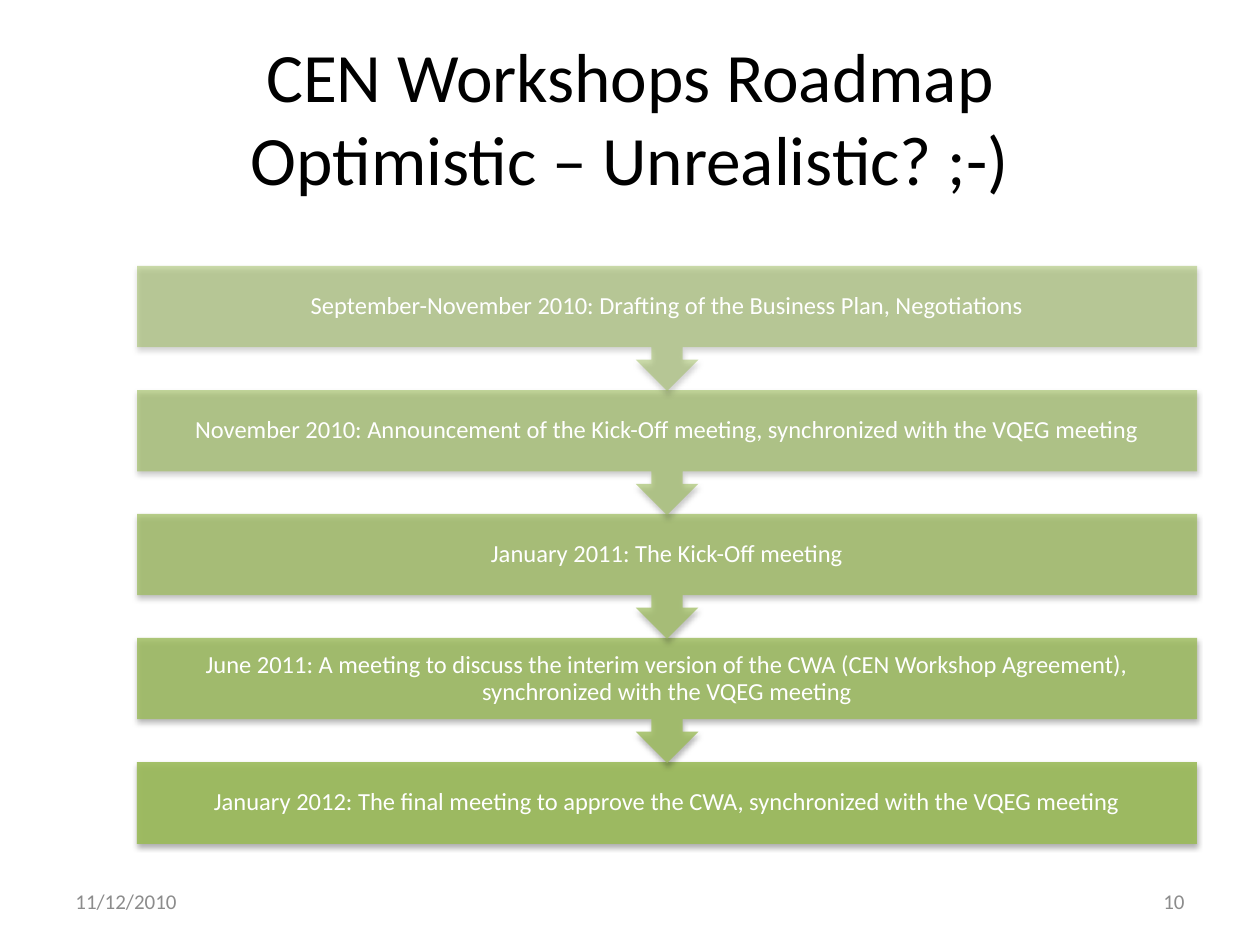
from lxml import etree
from pptx import Presentation
from pptx import util as u
from pptx.dml.color import RGBColor
from pptx.enum import shapes, text
from pptx.oxml import ns

SCALE = 914400 / 126
LEFT, TOP, WIDTH = 137, 266, 1060
BAR, STEP = 82, 124
STAGES = [
    "September-November 2010: Drafting of the Business Plan, Negotiations",
    "November 2010: Announcement of the Kick-Off meeting, synchronized with the VQEG meeting",
    "January 2011: The Kick-Off meeting",
    "June 2011: A meeting to discuss the interim version of the CWA "
    "(CEN Workshop Agreement), synchronized with the VQEG meeting",
    "January 2012: The final meeting to approve the CWA, synchronized with the VQEG meeting",
]


def px(*sizes):
    return [u.Emu(round(size * SCALE)) for size in sizes]


def color(code):
    return RGBColor.from_string(code)


def child(parent, tag, **attrs):
    return etree.SubElement(parent, ns.qn(tag), attrs)


def style(frame, words, size, code, align):
    frame.text = words
    frame.word_wrap = True
    frame.auto_size = text.MSO_AUTO_SIZE.NONE
    frame.vertical_anchor = text.MSO_ANCHOR.MIDDLE
    for para in frame.paragraphs:
        para.alignment = align
        for run in para.runs:
            run.font.name = "Calibri"
            run.font.size = u.Pt(size)
            run.font.color.rgb = color(code)


def add_title(slide, words):
    title = slide.shapes.title
    title.left, title.top, title.width, title.height = px(63, 38, 1134, 157)
    style(title.text_frame, words, 39.6, "000000", text.PP_ALIGN.CENTER)


def add_text(slide, box, words, size, code, align):
    frame = slide.shapes.add_textbox(*px(*box)).text_frame
    style(frame, words, size, code, align)
    return frame


def add_shadow(shape):
    shape.shadow.inherit = False
    effects = shape.element.spPr.find(ns.qn("a:effectLst"))
    outer = child(effects, "a:outerShdw", blurRad=str(u.Pt(3.1)),
                  dist=str(u.Pt(1.8)), dir="5400000", rotWithShape="0")
    black = child(outer, "a:srgbClr", val="000000")
    child(black, "a:alpha", val="35000")


def add_block(slide, kind, box, alpha):
    block = slide.shapes.add_shape(kind, *px(*box))
    block.fill.solid()
    block.fill.fore_color.rgb = color("9BBB59")
    green = block.element.spPr.find(".//" + ns.qn("a:srgbClr"))
    child(green, "a:alpha", val=str(alpha * 1000))
    block.line.fill.background()
    add_shadow(block)
    return block


def add_stage(slide, index, words):
    top = TOP + index * STEP
    alpha = 50 + 10 * index
    if index == len(STAGES) - 1:
        add_block(slide, shapes.MSO_SHAPE.RECTANGLE, (LEFT, top, WIDTH, BAR), alpha)
    else:
        arrow = add_block(slide, shapes.MSO_SHAPE.UP_ARROW_CALLOUT,
                          (LEFT, top, WIDTH, STEP + 1), alpha)
        arrow.rotation = 180
    frame = add_text(slide, (LEFT, top, WIDTH, BAR), words, 14, "FFFFFF",
                     text.PP_ALIGN.CENTER)
    frame.margin_left = frame.margin_right = u.Inches(0.11)
    frame.margin_top = frame.margin_bottom = u.Inches(0.11)
    frame.paragraphs[0].line_spacing = 0.9


def main():
    deck = Presentation()
    deck.slide_width, deck.slide_height = px(1260, 945)
    slide = deck.slides.add_slide(deck.slide_layouts[5])
    add_title(slide, "CEN Workshops Roadmap\vOptimistic – Unrealistic? ;-)")
    for index in reversed(range(len(STAGES))):
        add_stage(slide, index, STAGES[index])
    add_text(slide, (63, 876, 294, 50), "11/12/2010", 12, "8C8C8C", text.PP_ALIGN.LEFT)
    add_text(slide, (903, 876, 294, 50), "10", 12, "8C8C8C", text.PP_ALIGN.RIGHT)
    deck.save("out.pptx")


if __name__ == "__main__":
    main()
